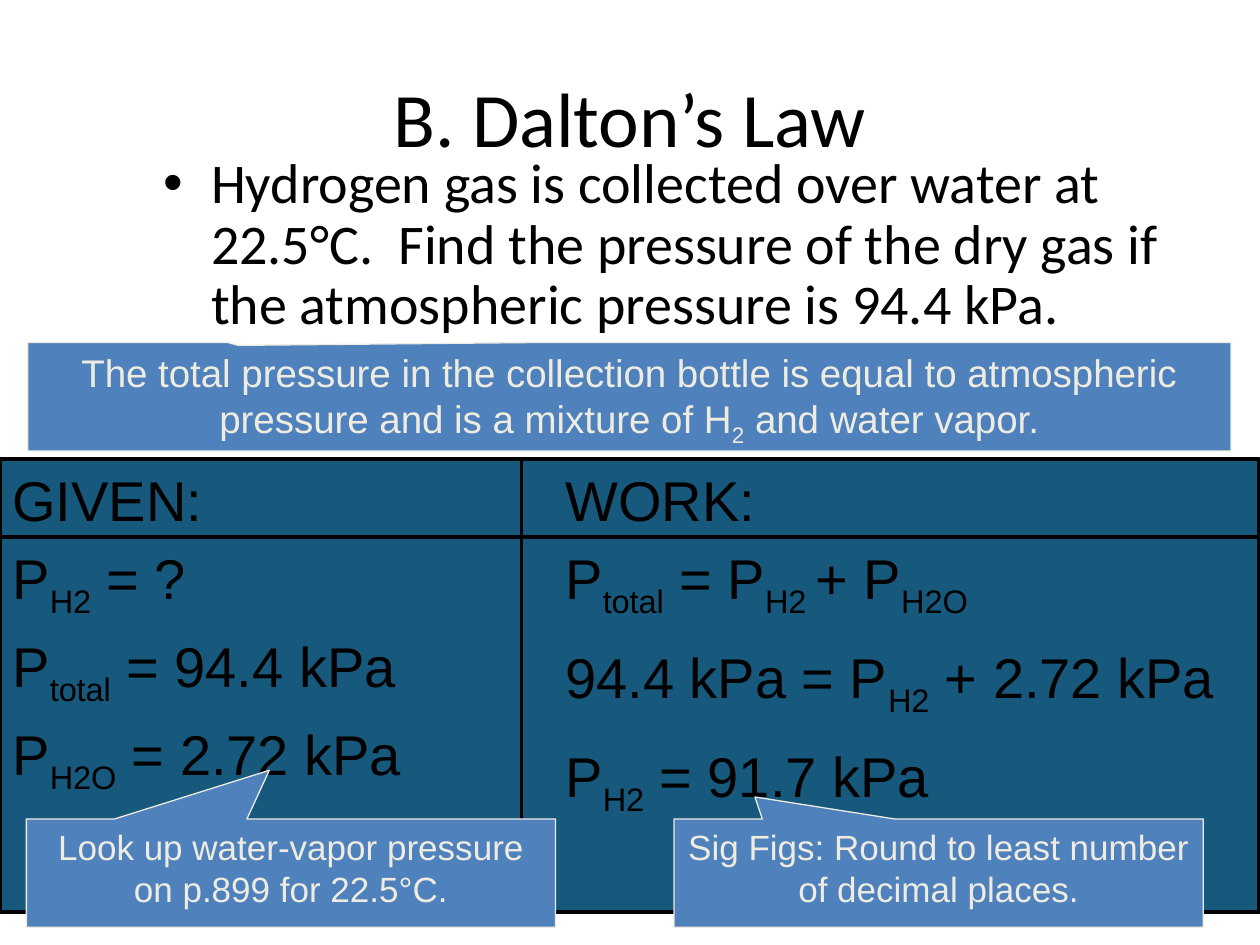
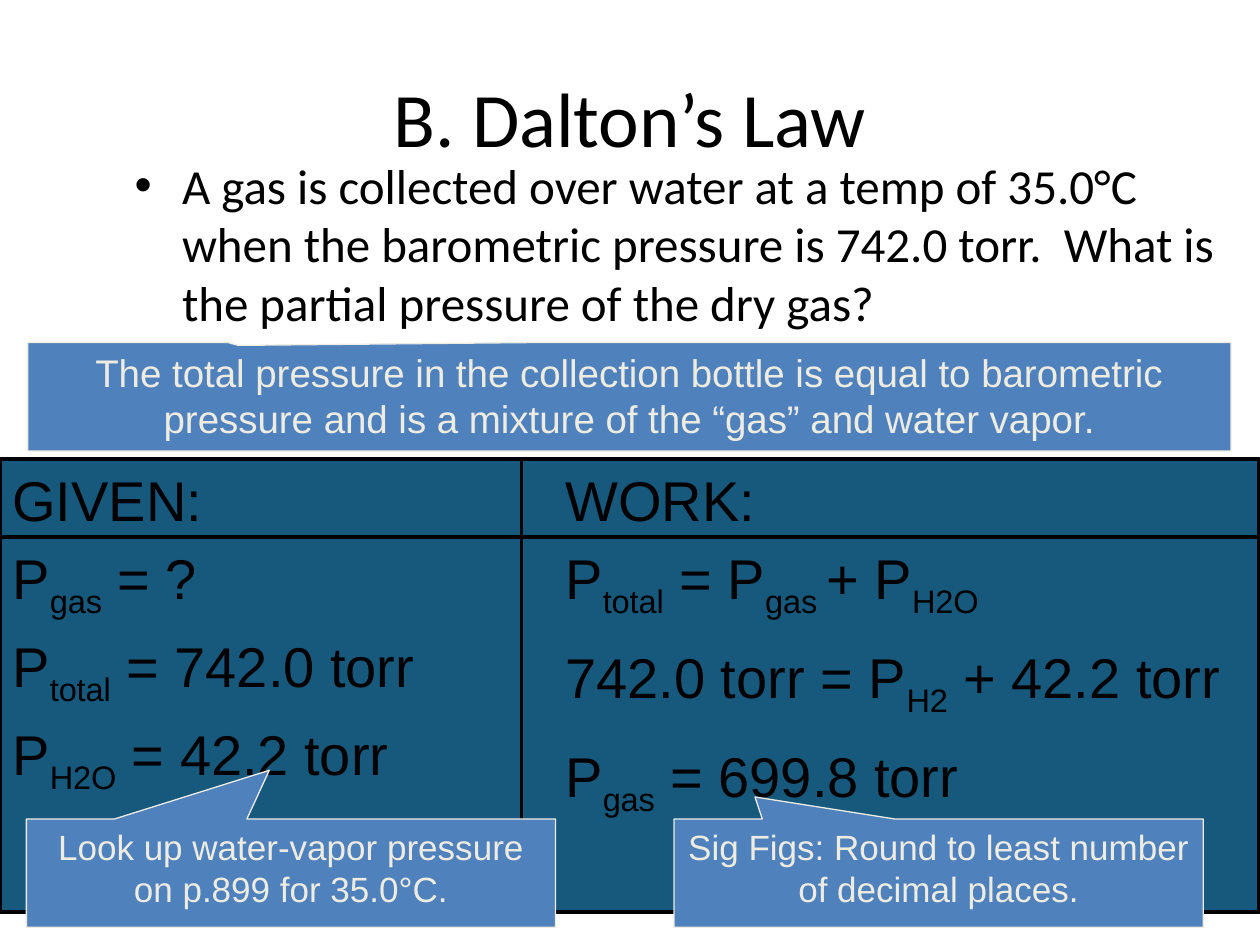
from collections import namedtuple

from lxml import etree
from pptx import Presentation
from pptx.dml.color import RGBColor
from pptx.enum.shapes import MSO_CONNECTOR, MSO_SHAPE
from pptx.enum.text import MSO_ANCHOR, MSO_AUTO_SIZE, PP_ALIGN
from pptx.oxml.ns import qn
from pptx.util import Pt

STRAIGHT = MSO_CONNECTOR.STRAIGHT
RECT, CALLOUT = MSO_SHAPE.RECTANGLE, MSO_SHAPE.RECTANGULAR_CALLOUT
TOP, MIDDLE = MSO_ANCHOR.TOP, MSO_ANCHOR.MIDDLE
LEFT, CENTER = PP_ALIGN.LEFT, PP_ALIGN.CENTER
NO_FIT = MSO_AUTO_SIZE.NONE

COLORS = {"ink": "000000", "panel": "17597D", "note": "4F81BD", "cream": "EEECE1"}
HEAD_FONT, TEXT_FONT = "Calibri", "Arial"
TITLE = "B. Dalton’s Law"
SIG_FIGS = "Sig Figs: Round to least number of decimal places."

Box = namedtuple("Box", "x y w h")
Note = namedtuple("Note", "box size tip")

TITLE_BOX = Box(36, 21.6, 648, 90)
PANEL_BOX = Box(0, 262.5, 719.3, 258.8)
NOTE_W, NOTE_H, NOTE_Y = 302.4, 61.9, 468
TOTAL_NOTE = Note(Box(15.8, 195.8, 687.6, NOTE_H), 22, (-0.325, -0.474))
LOOKUP_NOTE = Note(Box(15.1, NOTE_Y, NOTE_W, NOTE_H), 20, (-0.041, -0.949))
SIG_FIGS_NOTE = Note(Box(385.2, NOTE_Y, NOTE_W, NOTE_H), 20, (-0.347, -0.703))

PROBLEMS = [
    {
        "question": "Hydrogen gas is collected over water at 22.5°C.  Find the pressure "
                    "of the dry gas if the atmospheric pressure is 94.4 kPa.",
        "question_box": Box(86.4, 85, 622, 121.7),
        "question_size": 32,
        "line_spacing": 0.9,
        "total": "The total pressure in the collection bottle is equal to atmospheric "
                 "pressure and is a mixture of H|2| and water vapor.",
        "given": ["P|H2| = ?", "P|total| = 94.4 kPa", "P|H2O| = 2.72 kPa"],
        "work": ["P|total| = P|H2 |+ P|H2O", "94.4 kPa = P|H2| + 2.72 kPa",
                 "P|H2| = 91.7 kPa"],
        "lookup": "Look up water-vapor pressure on p.899 for 22.5°C.",
    },
    {
        "question": "A gas is collected over water at a temp of 35.0°C when the barometric "
                    "pressure is 742.0 torr.  What is the partial pressure of the dry gas?",
        "question_box": Box(69.8, 85, 650.2, 121.7),
        "question_size": 28,
        "line_spacing": 1.0,
        "total": "The total pressure in the collection bottle is equal to barometric "
                 "pressure and is a mixture of the “gas” and water vapor.",
        "given": ["P|gas| = ?", "P|total| = 742.0 torr", "P|H2O| = 42.2 torr"],
        "work": ["P|total| = P|gas |+ P|H2O", "742.0 torr = P|H2| + 42.2 torr",
                 "P|gas| = 699.8 torr"],
        "lookup": "Look up water-vapor pressure on p.899 for 35.0°C.",
    },
]


def rgb(name):
    return RGBColor.from_string(COLORS[name])


def pts(*lengths):
    return [Pt(n) for n in lengths]


def write(p, text, size, font=TEXT_FONT, color="ink", align=LEFT):
    """Add runs to p; every second part between bars is a subscript."""
    p.alignment = align
    for i, part in enumerate(text.split("|")):
        if not part:
            continue
        r = p.add_run()
        r.text = part
        r.font.size, r.font.name = Pt(size), font
        r.font.color.rgb = rgb(color)
        if i % 2:
            r._r.get_or_add_rPr().set("baseline", "-25000")


def space_before(p, percent):
    """Set the space before p as a share of its line height."""
    p.space_before = Pt(0)
    spacing = p._p.pPr.find(qn("a:spcBef"))
    spacing.remove(spacing[0])
    etree.SubElement(spacing, qn("a:spcPct")).set("val", str(percent * 1000))


def place(sp, box):
    sp.left, sp.top, sp.width, sp.height = pts(*box)
    tf = sp.text_frame
    tf.word_wrap, tf.auto_size = True, NO_FIT
    return tf


def add_box(s, kind, box, fill, line, weight):
    sp = s.shapes.add_shape(kind, *pts(*box))
    sp.shadow.inherit = False
    sp.fill.solid()
    sp.fill.fore_color.rgb = rgb(fill)
    sp.line.color.rgb = rgb(line)
    sp.line.width = Pt(weight)
    return sp


def add_rule(s, x1, y1, x2, y2):
    c = s.shapes.add_connector(STRAIGHT, *pts(x1, y1, x2, y2))
    c.line.color.rgb = rgb("ink")
    c.line.width = Pt(2.25)
    etree.SubElement(c._element.spPr, qn("a:effectLst"))


def add_title(s, box):
    tf = place(s.shapes.title, box)
    tf.vertical_anchor = MIDDLE
    write(tf.paragraphs[0], TITLE, 44, HEAD_FONT, align=CENTER)


def add_question(s, box, text, size, line_spacing):
    tf = place(s.placeholders[1], box)
    p = tf.paragraphs[0]
    write(p, text, size, HEAD_FONT)
    p.line_spacing = line_spacing
    space_before(p, 100)


def add_column(s, box, lines, gaps):
    tf = place(s.shapes.add_textbox(*pts(*box)), box)
    for i, (text, gap) in enumerate(zip(lines, gaps)):
        p = tf.add_paragraph() if i else tf.paragraphs[0]
        write(p, text, 32)
        space_before(p, gap)


def add_panel(s, box, given, work):
    """Draw the two-column worksheet with its heading row."""
    x, y, w, h = box
    split, head, gutter = 298, 44.2, 18
    add_box(s, RECT, box, "panel", "ink", 2.25)
    add_column(s, Box(x, y, split, h), ["GIVEN:"] + given, [20] * 4)
    add_column(s, Box(x + split + gutter, y, w - split - gutter, h),
               ["WORK:"] + work, [20, 20, 40, 40])
    add_rule(s, x + split, y, x + split, y + h)
    add_rule(s, x, y + head, x + w, y + head)


def add_note(s, note, text):
    sp = add_box(s, CALLOUT, note.box, "note", "cream", 0.75)
    for i, offset in enumerate(note.tip):
        sp.adjustments[i] = offset
    tf = place(sp, note.box)
    tf.vertical_anchor = TOP
    write(tf.paragraphs[0], text, note.size, color="cream", align=CENTER)


def add_problem_slide(prs, problem):
    s = prs.slides.add_slide(prs.slide_layouts[1])
    add_title(s, TITLE_BOX)
    add_question(s, problem["question_box"], problem["question"],
                 problem["question_size"], problem["line_spacing"])
    add_panel(s, PANEL_BOX, problem["given"], problem["work"])
    add_note(s, LOOKUP_NOTE, problem["lookup"])
    add_note(s, SIG_FIGS_NOTE, SIG_FIGS)
    add_note(s, TOTAL_NOTE, problem["total"])


def main():
    prs = Presentation()
    prs.slide_width, prs.slide_height = pts(720, 540)
    for problem in PROBLEMS:
        add_problem_slide(prs, problem)
    prs.save("out.pptx")


if __name__ == "__main__":
    main()
